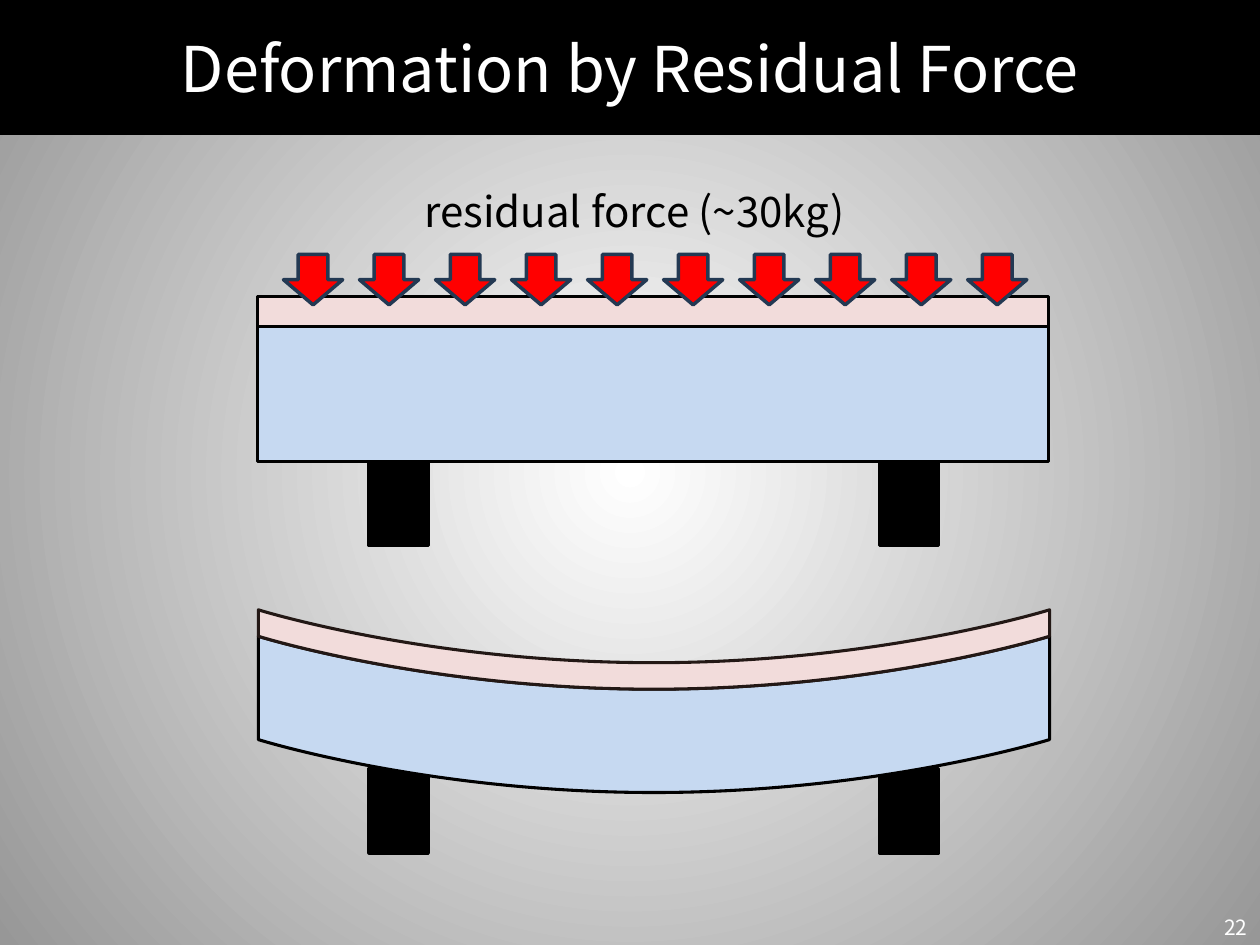
"""Builds a slide showing a plate that bends under a residual force."""
from lxml import etree
from pptx import Presentation, util as u
from pptx.dml.color import RGBColor
from pptx.enum import shapes, text
from pptx.oxml.ns import qn

FONT = "Noto Sans CJK JP"
COLORS = {
    "black": "000000", "white": "FFFFFF", "grey": "979797", "film": "F2DCDB",
    "plate": "C6D9F1", "film_edge": "231815", "force": "FF0000", "force_edge": "233953",
}
TITLE = {"words": "Deformation by Residual Force", "box": (0, 0, 10, 1.07),
         "size": 36, "color": "white", "align": text.PP_ALIGN.CENTER}
PAGE = {"words": "22", "box": (9.33, 7.22, 0.67, 0.28), "size": 12,
        "color": "white", "align": text.PP_ALIGN.RIGHT}
FORCE_LABEL = {"words": "residual force (~30kg)", "box": (3.27, 1.42, 3.9, 0.5),
               "size": 24, "color": "black", "align": text.PP_ALIGN.LEFT}
SUPPORT_LEFTS, SUPPORT_SIZE = (2.93, 6.98), (0.47, 0.67)
FLAT_SUPPORT_TOP, BENT_SUPPORT_TOP = 3.66, 6.1
FLAT_FILM, FLAT_PLATE = (2.04, 2.35, 6.28, 0.33), (2.04, 2.59, 6.28, 1.07)
BENT_LAYERS = [("plate", "black", 5.05, 5.87), ("film", "film_edge", 4.84, 5.05)]
BENT_LEFT, BENT_MIDDLE, BENT_RIGHT = 2.05, 5.19, 8.33
BEND_LEFT, BEND_RIGHT, SAG = 3.39, 6.98, 0.42
FORCE_COUNT, FORCE_LEFT, FORCE_LAST, FORCE_TOP = 10, 2.25, 7.68, 2.02
FORCE_SIZE = (0.47, 0.4)


def rgb(name):
    return RGBColor.from_string(COLORS[name])


def paint(shape, fill, edge, width):
    shape.shadow.inherit = False
    shape.fill.solid()
    shape.fill.fore_color.rgb = rgb(fill)
    shape.line.color.rgb = rgb(edge)
    shape.line.width = u.Pt(width)


def add_block(parent, kind, box, fill, edge="black", width=2):
    paint(parent.shapes.add_shape(kind, *map(u.Inches, box)), fill, edge, width)


def write(shape, words, box, size, color, align):
    for side, length in zip(("left", "top", "width", "height"), box):
        setattr(shape, side, u.Inches(length))
    frame = shape.text_frame
    frame.text = words
    frame_format = {"word_wrap": True, "auto_size": text.MSO_AUTO_SIZE.NONE,
                    "vertical_anchor": text.MSO_ANCHOR.MIDDLE}
    for key, value in frame_format.items():
        setattr(frame, key, value)
    line = frame.paragraphs[0]
    line.alignment = align
    font = line.runs[0].font
    for key, value in {"name": FONT, "size": u.Pt(size)}.items():
        setattr(font, key, value)
    font.color.rgb = rgb(color)


def add_label(parent, label):
    write(parent.shapes.add_textbox(*map(u.Inches, label["box"])), **label)


def add_supports(parent, top):
    for left in SUPPORT_LEFTS:
        add_block(parent, shapes.MSO_SHAPE.RECTANGLE, (left, top, *SUPPORT_SIZE), "black")


def sagging_edge(end):
    low = end + SAG
    left, right = (BENT_LEFT, end), (BENT_RIGHT, end)
    return [left, left, (BEND_LEFT, low), (BENT_MIDDLE, low),
            (BEND_RIGHT, low), right, right]


def add_bent_layer(parent, fill, edge, top, bottom):
    outline = sagging_edge(top) + sagging_edge(bottom)[::-1]
    points = [tuple(map(u.Inches, point)) for point in outline]
    builder = parent.shapes.build_freeform(*points[0])
    builder.add_line_segments(points[1:], close=True)
    layer = builder.convert_to_shape()
    paint(layer, fill, edge, 1.75)
    segments = layer._element.findall(".//" + qn("a:lnTo"))
    for first in (0, 3, 7, 10):
        curve = etree.Element(qn("a:cubicBezTo"))
        segments[first].addprevious(curve)
        for segment in segments[first:first + 3]:
            curve.append(segment[0])
            segment.getparent().remove(segment)


def set_background(slide):
    fill = slide.background.fill
    fill.gradient()
    for stop, color, place in zip(fill.gradient_stops, ("white", "grey"), (0, 1)):
        stop.color.rgb = rgb(color)
        stop.position = place
    linear = slide.background._cSld.find(".//" + qn("a:lin"))
    gradient = linear.getparent()
    gradient.remove(linear)
    circle = etree.SubElement(gradient, qn("a:path"), {"path": "circle"})
    etree.SubElement(circle, qn("a:fillToRect"), dict.fromkeys("ltrb", "50000"))


def main():
    deck = Presentation()
    deck.slide_width, deck.slide_height = u.Inches(10), u.Inches(7.5)
    slide = deck.slides.add_slide(deck.slide_layouts[5])
    set_background(slide)
    title = slide.shapes.title
    write(title, **TITLE)
    title.fill.solid()
    title.fill.fore_color.rgb = rgb("black")
    add_label(slide, PAGE)

    rectangle = shapes.MSO_SHAPE.RECTANGLE
    add_supports(slide.shapes.add_group_shape(), FLAT_SUPPORT_TOP)
    add_block(slide, rectangle, FLAT_FILM, "film", width=1.75)

    bent = slide.shapes.add_group_shape()
    add_supports(bent, BENT_SUPPORT_TOP)
    for layer in BENT_LAYERS:
        add_bent_layer(bent, *layer)

    add_block(slide, rectangle, FLAT_PLATE, "plate", width=1.75)

    forces = slide.shapes.add_group_shape()
    pitch = (FORCE_LAST - FORCE_LEFT) / (FORCE_COUNT - 1)
    for index in reversed(range(FORCE_COUNT)):
        box = (FORCE_LEFT + index * pitch, FORCE_TOP, *FORCE_SIZE)
        add_block(forces, shapes.MSO_SHAPE.DOWN_ARROW, box, "force", "force_edge")
    add_label(forces, FORCE_LABEL)
    deck.save("out.pptx")


if __name__ == "__main__":
    main()
